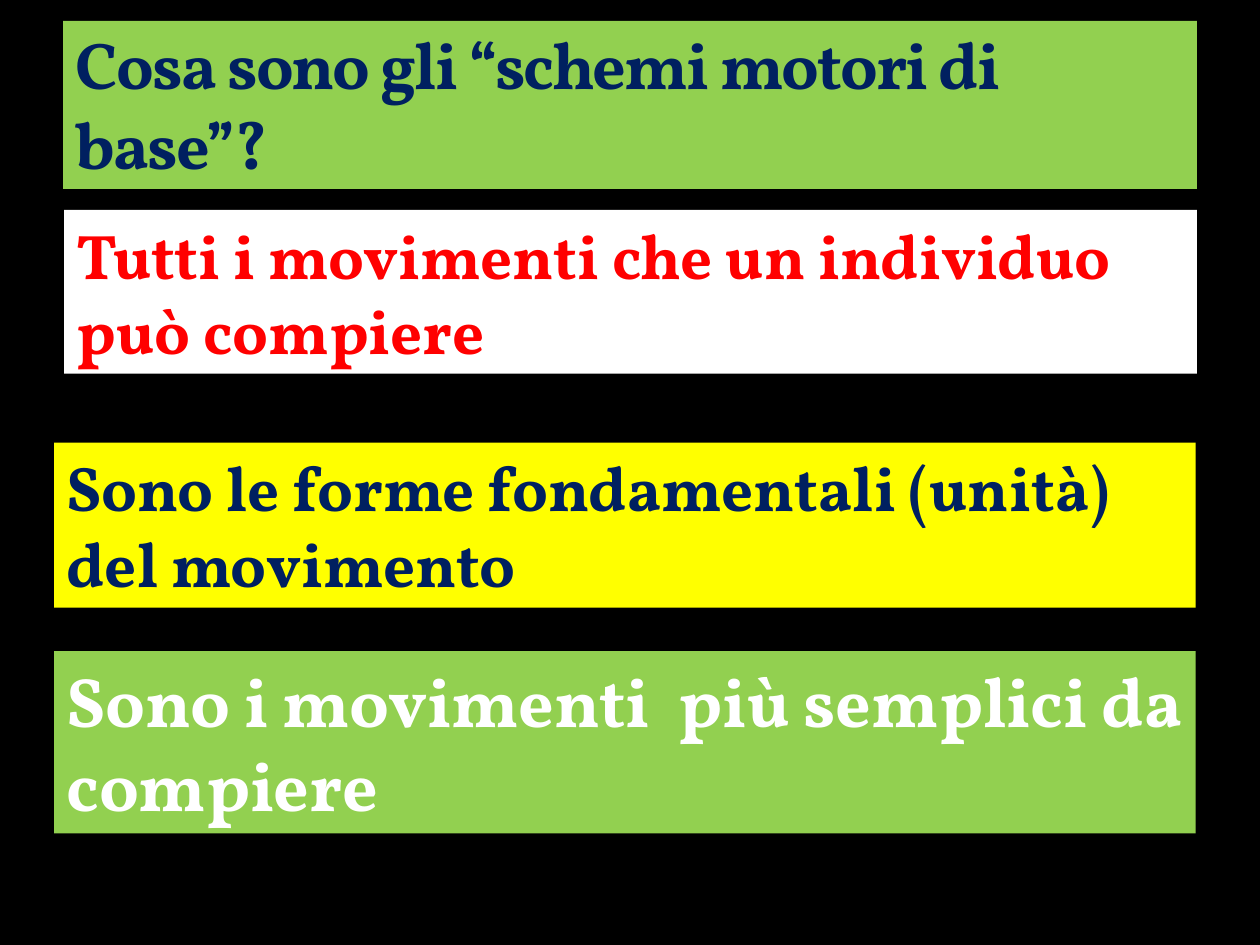
from dataclasses import dataclass

from lxml.etree import SubElement
from pptx import Presentation
from pptx.dml.color import RGBColor
from pptx.enum.text import MSO_ANCHOR, MSO_AUTO_SIZE, PP_ALIGN
from pptx.oxml.ns import qn
from pptx.shapes.base import BaseShape
from pptx.slide import Slide
from pptx.text.text import Font
from pptx.util import Inches, Pt


@dataclass(frozen=True)
class Theme:
    font: str = "Vollkorn"
    back: str = "000000"
    green: str = "92D050"
    white: str = "FFFFFF"
    yellow: str = "FFFF00"
    navy: str = "002060"
    red: str = "FF0000"
    edge: str = "1B406E"
    head: float = 37.8
    text: float = 36
    big: float = 40


@dataclass(frozen=True)
class Band:
    words: str
    left: float
    top: float
    width: float
    height: float
    fill: str
    ink: str
    size: float
    before: float = 0


WIDE, HIGH = Inches(10), Inches(7.5)
LOOK = Theme()
HEAD = Band("Cosa sono gli “schemi motori di base”?",
            5, 2.22, 90, 17.78, LOOK.green, LOOK.navy, LOOK.head)
BANDS = [
    Band("Tutti i movimenti che un individuo può compiere",
         5.1, 22.22, 89.9, 17.33, LOOK.white, LOOK.red, LOOK.text, 6),
    Band("Sono le forme fondamentali (unità) del movimento",
         4.3, 46.85, 90.6, 17.45, LOOK.yellow, LOOK.navy, LOOK.text),
    Band("Sono i movimenti  più semplici da compiere",
         4.3, 68.9, 90.6, 19.3, LOOK.green, LOOK.white, LOOK.big),
]


def color(code: str) -> RGBColor:
    return RGBColor.from_string(code)


def dress(shape: BaseShape, band: Band, anchor: MSO_ANCHOR) -> Font:
    shape.left = round(WIDE * band.left / 100)
    shape.top = round(HIGH * band.top / 100)
    shape.width = round(WIDE * band.width / 100)
    shape.height = round(HIGH * band.height / 100)
    shape.fill.solid()
    shape.fill.fore_color.rgb = color(band.fill)
    frame = shape.text_frame
    frame.word_wrap = True
    frame.auto_size = MSO_AUTO_SIZE.NONE
    frame.vertical_anchor = anchor
    para = frame.paragraphs[0]
    para.alignment = PP_ALIGN.LEFT
    para.space_before = Pt(band.before)
    run = para.add_run()
    run.text = band.words
    font = run.font
    font.name = LOOK.font
    font.size = Pt(band.size)
    font.bold = True
    font.color.rgb = color(band.ink)
    return font


def add_head(slide: Slide, band: Band) -> None:
    font = dress(slide.shapes.title, band, MSO_ANCHOR.BOTTOM)
    props = font._element
    props.set("spc", "-100")
    line = SubElement(props, qn("a:ln"), w=str(Pt(0.25)))
    props.insert(0, line)
    fill = SubElement(line, qn("a:solidFill"))
    tint = SubElement(fill, qn("a:srgbClr"), val=LOOK.edge)
    SubElement(tint, qn("a:alpha"), val="25000")


def add_band(slide: Slide, band: Band) -> None:
    box = slide.shapes.add_textbox(0, 0, WIDE, HIGH)
    dress(box, band, MSO_ANCHOR.TOP)


def main() -> None:
    deck = Presentation()
    deck.slide_width, deck.slide_height = WIDE, HIGH
    slide = deck.slides.add_slide(deck.slide_layouts.get_by_name("Title Only"))
    back = slide.background.fill
    back.solid()
    back.fore_color.rgb = color(LOOK.back)
    add_head(slide, HEAD)
    for band in BANDS:
        add_band(slide, band)
    deck.save("out.pptx")


if __name__ == "__main__":
    main()
